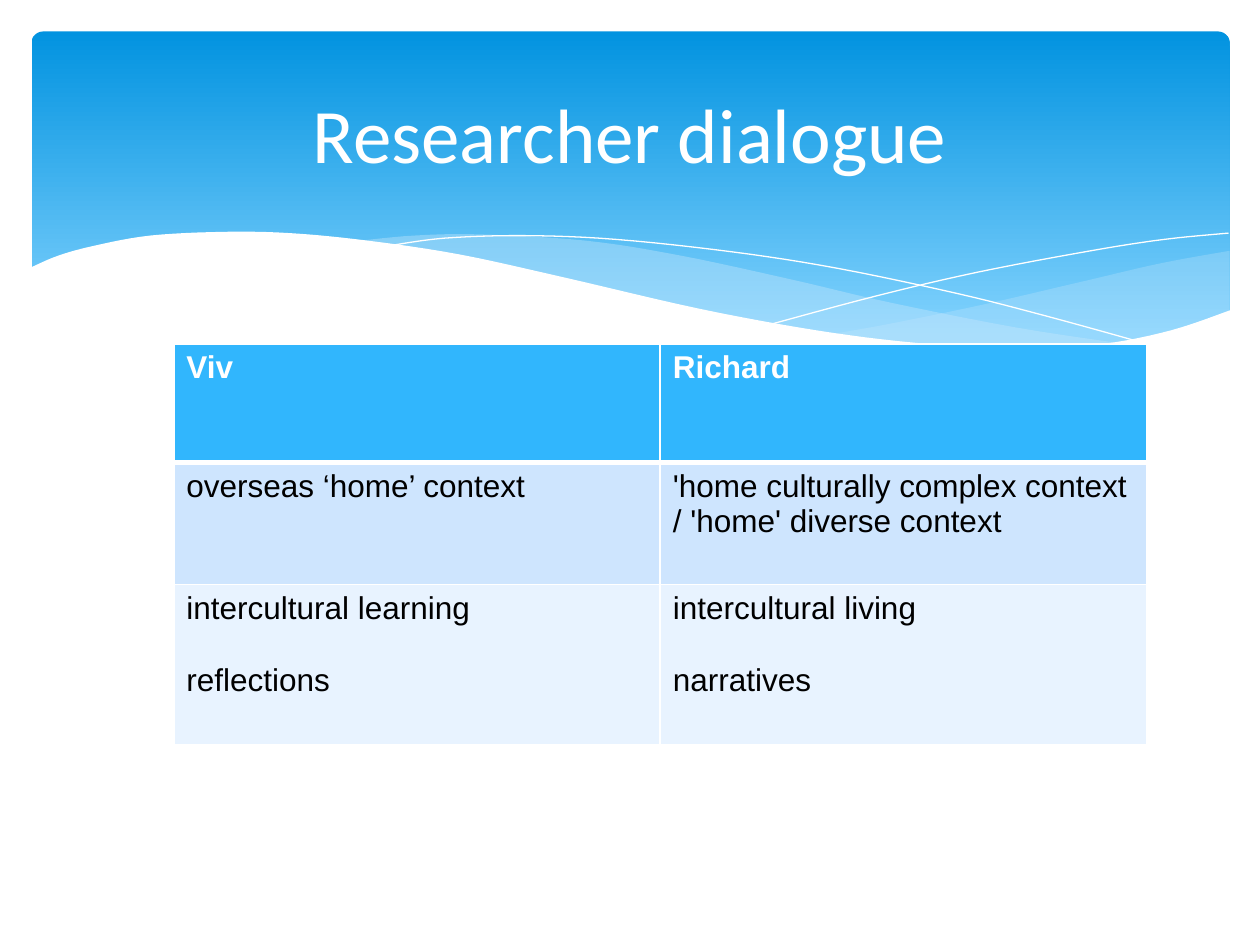
from dataclasses import dataclass

from lxml import etree
from pptx import Presentation, util as u
from pptx.dml.color import RGBColor
from pptx.enum import shapes, text
from pptx.oxml import ns


@dataclass(frozen=True)
class Theme:
    white: str = "FFFFFF"
    black: str = "000000"
    band_top: str = "0293E0"
    band_bottom: str = "83D3FE"
    ripple: str = "C6E7FC"
    header: str = "31B6FD"
    rows: tuple = ("CEE5FE", "E8F3FF")
    title_font: str = "Calibri"
    body_font: str = "Arial"
    title_size: int = 44
    body_size: int = 18
    paragraph_gap: int = 21


def rgb(value):
    return RGBColor.from_string(value)


def apply(target, values):
    for name, value in values.items():
        setattr(target, name, value)


def smooth(knots, steps=6):
    """Points of a Catmull-Rom curve through the knots."""
    padded = [knots[0], *knots, knots[-1]]
    points = [knots[0]]
    for a, b, c, d in zip(padded, padded[1:], padded[2:], padded[3:]):
        for step in range(1, steps + 1):
            t = step / steps
            points.append(tuple(
                0.5 * (2 * q + (r - p) * t + (2 * p - 5 * q + 4 * r - s) * t ** 2
                       + (3 * q - p - 3 * r + s) * t ** 3)
                for p, q, r, s in zip(a, b, c, d)))
    return points


class SlideBuilder:
    def __init__(self, slide, theme):
        self.slide, self.theme = slide, theme

    def font(self, font, name, size, color, bold=False):
        apply(font, {"name": name, "size": u.Pt(size), "bold": bold})
        font.color.rgb = rgb(color)

    def band(self, left, top, width, height):
        band = self.slide.shapes.add_shape(
            shapes.MSO_SHAPE.ROUNDED_RECTANGLE,
            *map(u.Inches, (left, top, width, height)))
        band.adjustments[0] = 0.034
        band.shadow.inherit = False
        band.line.fill.background()
        band.fill.gradient()
        band.fill.gradient_angle = 270
        colors = (self.theme.band_top, self.theme.band_bottom)
        for stop, color, position in zip(band.fill.gradient_stops, colors, (0, 0.9)):
            stop.color.rgb = rgb(color)
            stop.position = position

    def outline(self, points, closed):
        start, *rest = [(u.Inches(x), u.Inches(y)) for x, y in points]
        builder = self.slide.shapes.build_freeform(*start)
        builder.add_line_segments(rest, close=closed)
        shape = builder.convert_to_shape()
        shape.shadow.inherit = False
        return shape

    def wave(self, points, color, opacity=100):
        wave = self.outline(points, True)
        wave.line.fill.background()
        wave.fill.solid()
        wave.fill.fore_color.rgb = rgb(color)
        if opacity < 100:
            clr = wave.fill._xPr.find(".//" + ns.qn("a:srgbClr"))
            etree.SubElement(clr, ns.qn("a:alpha"), val=str(opacity * 1000))

    def strand(self, knots):
        strand = self.outline(smooth(knots), False)
        strand.fill.background()
        strand.line.color.rgb = rgb(self.theme.white)
        strand.line.width = u.Pt(0)

    def title(self, words, left, top, width, height):
        title = self.slide.shapes.title
        # Bring the title in front of the band and waves
        self.slide.shapes._spTree.append(title._element)
        apply(title, {"left": u.Inches(left), "top": u.Inches(top),
                      "width": u.Inches(width), "height": u.Inches(height)})
        frame = title.text_frame
        frame.text = words
        apply(frame, {"vertical_anchor": text.MSO_ANCHOR.MIDDLE, "word_wrap": True})
        line = frame.paragraphs[0]
        line.alignment = text.PP_ALIGN.CENTER
        self.font(line.runs[0].font, self.theme.title_font,
                  self.theme.title_size, self.theme.white)

    def borders(self, cell, widths):
        for place, (side, width) in enumerate(widths.items()):
            line = etree.Element(ns.qn(f"a:ln{side}"), w=str(u.Pt(width)))
            fill = etree.SubElement(line, ns.qn("a:solidFill"))
            etree.SubElement(fill, ns.qn("a:srgbClr"), val=self.theme.white)
            cell._tc.get_or_add_tcPr().insert(place, line)

    def table(self, rows, left, top, column_width, heights):
        theme = self.theme
        columns = len(rows[0])
        table = self.slide.shapes.add_table(
            len(rows), columns, u.Inches(left), u.Inches(top),
            u.Inches(column_width * columns), u.Inches(sum(heights))).table
        for column in table.columns:
            column.width = u.Inches(column_width)
        for index, (entries, height) in enumerate(zip(rows, heights)):
            table.rows[index].height = u.Inches(height)
            header = index == 0
            for number, words in enumerate(entries):
                cell = table.cell(index, number)
                cell.text = words
                for order, line in enumerate(cell.text_frame.paragraphs):
                    line.space_before = u.Pt(theme.paragraph_gap if order else 0)
                    self.font(line.runs[0].font, theme.body_font, theme.body_size,
                              theme.white if header else theme.black, header)
                cell.fill.solid()
                cell.fill.fore_color.rgb = rgb((theme.header, *theme.rows)[index])
                self.borders(cell, {"L": 1, "R": 1, "T": 3 if index == 1 else 1,
                                    "B": 3 if header else 1})


def main():
    theme = Theme()
    deck = Presentation()
    apply(deck, {"slide_width": u.Inches(10), "slide_height": u.Inches(7.5)})
    page = SlideBuilder(deck.slides.add_slide(deck.slide_layouts[5]), theme)

    # Blue band
    page.band(0.25, 0.25, 9.51, 2.7)

    # Translucent ripples: upper edge, then lower edge
    page.wave(smooth([(9.76, 1.99), (9.21, 2.09), (8.61, 2.23), (7.79, 2.42),
                      (7.06, 2.57), (6.61, 2.65)])
              + smooth([(6.61, 2.65), (7.18, 2.72), (8.03, 2.78), (8.72, 2.74),
                        (9.28, 2.63), (9.76, 2.47)]), theme.ripple, 29)
    page.wave(smooth([(8.93, 2.73), (8.07, 2.6), (7.06, 2.4), (6.29, 2.22),
                      (5.41, 2.03), (4.65, 1.91), (3.8, 1.86), (3.28, 1.87),
                      (2.86, 1.91)])
              + smooth([(2.86, 1.91), (3.62, 2.03), (4.49, 2.22), (5.3, 2.4),
                        (6.18, 2.58), (6.95, 2.7), (7.61, 2.77), (8.18, 2.78),
                        (8.93, 2.73)]), theme.ripple, 40)

    # Thin white strands
    page.strand([(3.09, 1.95), (3.53, 1.89), (4.16, 1.87), (4.89, 1.9),
                 (5.82, 2), (6.65, 2.13), (7.6, 2.33), (8.31, 2.51), (9.07, 2.72)])
    page.strand([(6.13, 2.57), (6.95, 2.35), (7.76, 2.16), (8.66, 1.99),
                 (9.24, 1.9), (9.75, 1.85)])

    # White wave that cuts the foot of the band
    page.wave(smooth([(9.77, 2.46), (9.3, 2.62), (8.75, 2.73), (8.09, 2.77),
                      (7.26, 2.72), (6.47, 2.62), (5.55, 2.45), (4.47, 2.2),
                      (3.65, 2.02), (2.92, 1.91), (2.3, 1.85), (1.77, 1.84),
                      (1.19, 1.87), (0.75, 1.95), (0.46, 2.03), (0.23, 2.13)])
              + [(0.23, 3.29), (9.77, 3.29)], theme.white)

    # Title and comparison of the two researchers
    page.title("Researcher dialogue", 0.5, 0.37, 9, 1.37)
    page.table([
        ("Viv", "Richard"),
        ("overseas ‘home’ context",
         "'home culturally complex context / 'home' diverse context"),
        ("intercultural learning\nreflections", "intercultural living\nnarratives"),
    ], 1.38, 2.73, 3.86, (0.94, 0.97, 1.27))

    deck.save("out.pptx")


if __name__ == "__main__":
    main()
